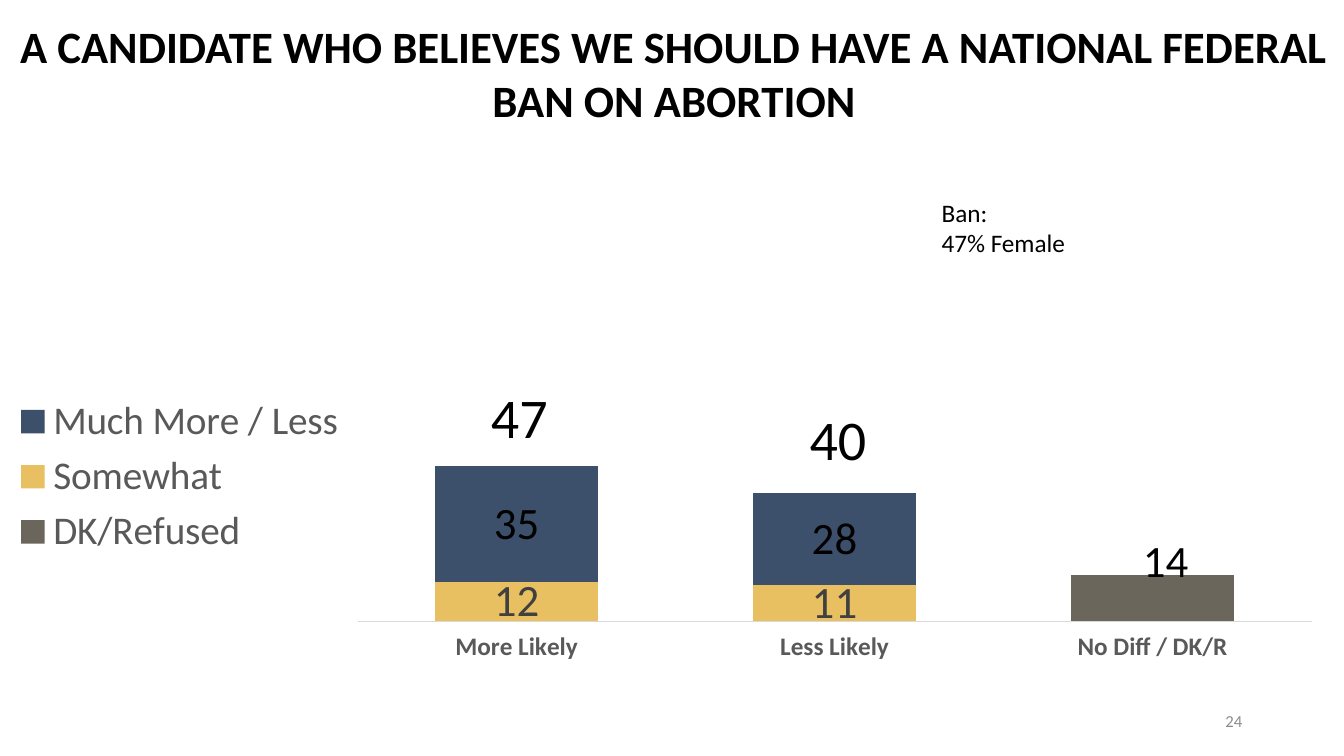
from lxml import etree
from pptx import Presentation
from pptx.chart.data import CategoryChartData
from pptx.dml.color import RGBColor
from pptx.enum.chart import XL_CHART_TYPE, XL_LEGEND_POSITION, XL_TICK_LABEL_POSITION, XL_TICK_MARK
from pptx.enum.text import MSO_ANCHOR, PP_ALIGN
from pptx.oxml.ns import qn
from pptx.util import Inches, Pt

STACK = XL_CHART_TYPE.COLUMN_STACKED
LEFT, CENTER, RIGHT = PP_ALIGN.LEFT, PP_ALIGN.CENTER, PP_ALIGN.RIGHT
TOP, MIDDLE = MSO_ANCHOR.TOP, MSO_ANCHOR.MIDDLE
NO_TICK = XL_TICK_MARK.NONE

BLACK = RGBColor(0x00, 0x00, 0x00)
DARK = RGBColor(0x40, 0x40, 0x40)
GREY = RGBColor(0x59, 0x59, 0x59)
PALE = RGBColor(0x8C, 0x8C, 0x8C)
RULE = RGBColor(0xD9, 0xD9, 0xD9)
STONE = RGBColor(0x6B, 0x66, 0x5B)
GOLD = RGBColor(0xE8, 0xC0, 0x62)
NAVY = RGBColor(0x3C, 0x4F, 0x6B)
FONT = "Calibri"

# Content
CATS = ["More Likely", "Less Likely", "No Diff / DK/R"]
# name, values, fill, label colour
SERIES = [
    ("DK/Refused", (None, None, 14), STONE, BLACK),
    ("Somewhat", (12, 11, None), GOLD, DARK),
    ("Much More / Less", (35, 28, None), NAVY, BLACK),
]
# lines, box, size, colour, bold, alignment, anchor
TEXTS = [
    (["A CANDIDATE WHO BELIEVES WE SHOULD HAVE A NATIONAL FEDERAL BAN ON ABORTION"],
     (0.04, 0.14, 13.29, 1.99), 32, BLACK, True, CENTER, TOP),
    (["24"], (9.42, 6.95, 3, 0.4), 12, PALE, False, RIGHT, MIDDLE),
    (["47"], (4.74, 3.75, 0.82, 0.77), 40, BLACK, False, CENTER, TOP),
    (["40"], (7.9, 3.96, 0.82, 0.77), 40, BLACK, False, CENTER, TOP),
    (["Ban:", "47% Female"], (9.24, 1.91, 2.89, 0.71), 18, BLACK, False, LEFT, TOP),
]
CHART = (0, 2.74, 13.14, 3.98)
PLOT = {"layoutTarget": "inner", "xMode": "edge", "yMode": "edge",
        "x": 0.27, "y": 0.04, "w": 0.72, "h": 0.82}
SHIFT = {"x": 0.01, "y": -0.09}


def style(font, size, color, bold=False):
    font.name, font.size, font.bold = FONT, Pt(size), bold
    font.color.rgb = color


def layout(rules):
    node = etree.Element(qn("c:layout"))
    inner = etree.SubElement(node, qn("c:manualLayout"))
    for key, val in rules.items():
        etree.SubElement(inner, qn("c:" + key)).set("val", str(val))
    return node


def place(parent, rules, index):
    for old in parent.findall(qn("c:layout")):
        parent.remove(old)
    parent.insert(index, layout(rules))


def add_bars(slide):
    data = CategoryChartData()
    data.categories = CATS
    for name, vals, _, _ in SERIES:
        data.add_series(name, vals)
    box = [Inches(n) for n in CHART]
    chart = slide.shapes.add_chart(STACK, *box, data).chart
    style(chart.font, 10, BLACK)
    chart.has_title = False

    # Legend and axes
    chart.has_legend = True
    chart.legend.position = XL_LEGEND_POSITION.LEFT
    chart.legend.include_in_layout = False
    style(chart.legend.font, 28, GREY)
    cat, val = chart.category_axis, chart.value_axis
    cat.major_tick_mark = cat.minor_tick_mark = NO_TICK
    cat.tick_label_position = XL_TICK_LABEL_POSITION.LOW
    style(cat.tick_labels.font, 18, GREY, True)
    cat.format.line.color.rgb = RULE
    cat.format.line.width = Pt(0.75)
    val.minimum_scale, val.maximum_scale = 0, 100
    val.has_major_gridlines = False
    val.visible = False

    # Bars and their labels
    plot = chart.plots[0]
    plot.gap_width, plot.overlap = 95, 100
    plot.vary_by_categories = False
    for ser, (_, _, fill, ink) in zip(plot.series, SERIES):
        ser.format.fill.solid()
        ser.format.fill.fore_color.rgb = fill
        ser.data_labels.show_value = True
        style(ser.data_labels.font, 32, ink)

    # The last bar carries its label above it
    style(plot.series[0].points[2].data_label.font, 32, BLACK)
    root = chart.element
    place(next(root.iter(qn("c:dLbl"))), SHIFT, 1)
    place(next(root.iter(qn("c:plotArea"))), PLOT, 0)


def add_text(slide, lines, box, size, color, bold, align, anchor):
    frame = slide.shapes.add_textbox(*[Inches(n) for n in box]).text_frame
    frame.word_wrap = True
    frame.vertical_anchor = anchor
    frame.text = "\n".join(lines)
    for para in frame.paragraphs:
        para.alignment = align
        for run in para.runs:
            style(run.font, size, color, bold)


def main():
    prs = Presentation()
    prs.slide_width, prs.slide_height = Inches(13.33), Inches(7.5)
    slide = prs.slides.add_slide(prs.slide_layouts[6])
    add_bars(slide)
    for item in TEXTS:
        add_text(slide, *item)
    prs.save("out.pptx")


if __name__ == "__main__":
    main()
